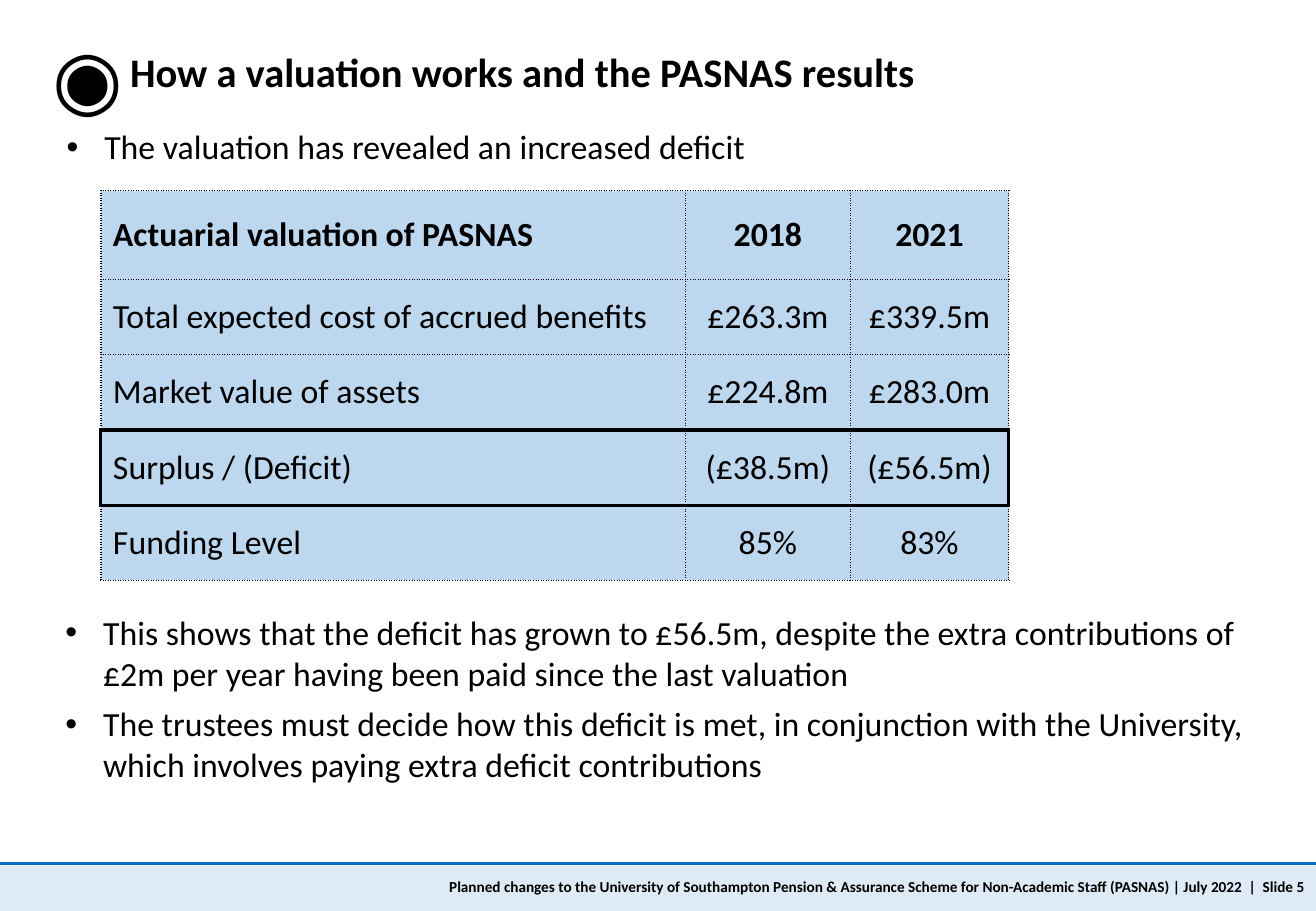
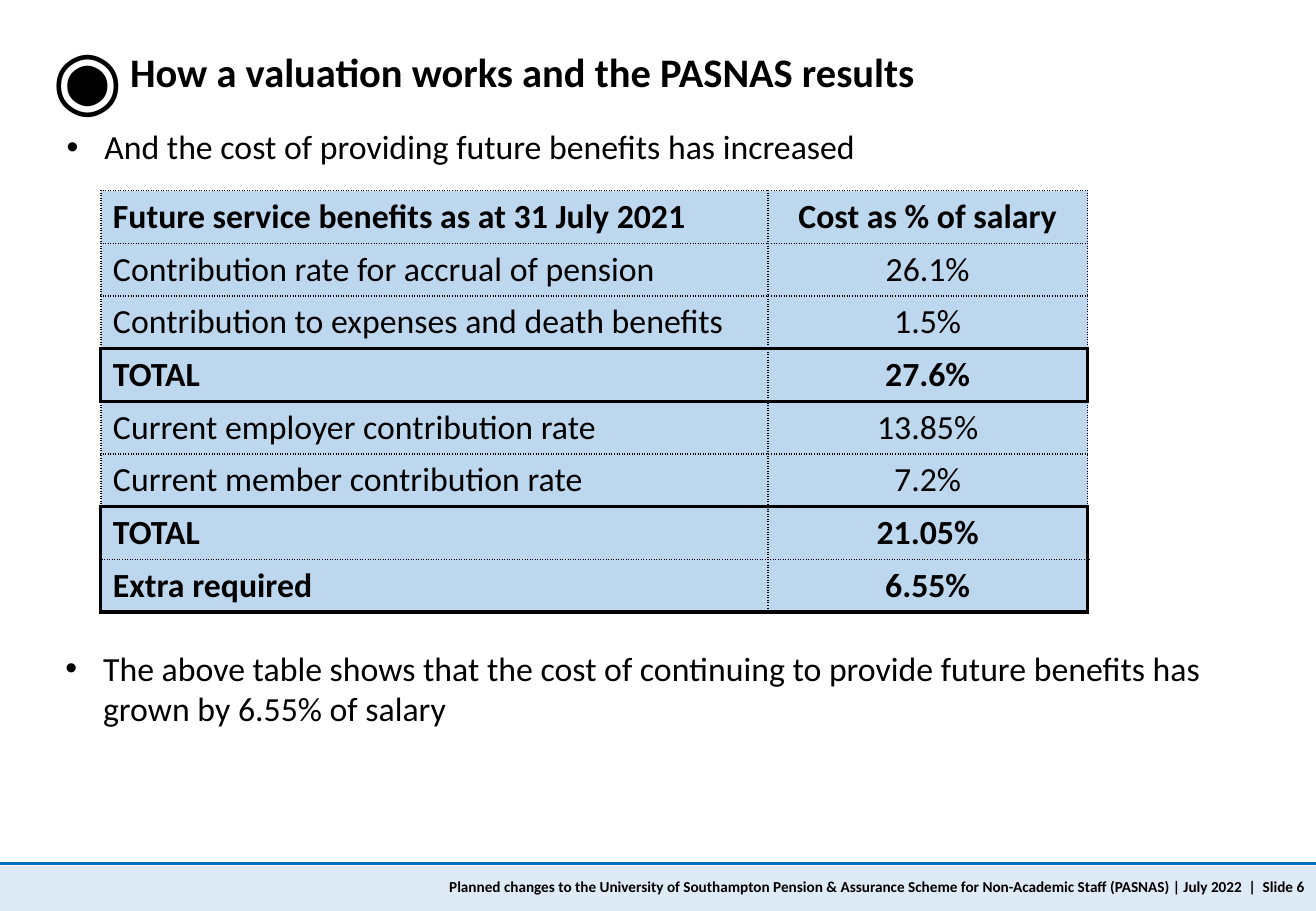
from dataclasses import dataclass

import pptx
import pptx.dml.color
import pptx.enum.shapes
import pptx.enum.text
import pptx.oxml
import pptx.oxml.ns
import pptx.util
from pptx.util import Inches

RGBColor = pptx.dml.color.RGBColor
Align = pptx.enum.text.PP_ALIGN
Anchor = pptx.enum.text.MSO_ANCHOR

BLACK = RGBColor(0x00, 0x00, 0x00)
RULE_BLUE = RGBColor(0x00, 0x70, 0xC0)
FOOTER_BLUE = RGBColor(0xDE, 0xEB, 0xF7)
CELL_BLUE = RGBColor(0xBD, 0xD7, 0xEE)

FONT = "Calibri"
SLIDE_WIDTH, SLIDE_HEIGHT = Inches(10.83), Inches(7.5)
TITLE = "How a valuation works and the PASNAS results"
FOOTER = (
    "Planned changes to the University of Southampton Pension & Assurance Scheme "
    "for Non-Academic Staff (PASNAS) | July 2022  |  Slide "
)
HANGING = Inches(0.31)
TABLE_LEFT, TABLE_TOP = Inches(0.83), Inches(1.57)
HEAVY, DOTTED = (2.25, "solid"), (1, "sysDot")


@dataclass
class ValuationTable:
    rows: list[list[str]]
    widths: list[float]
    heights: list[float]
    bold_rows: set[int]
    frames: list[tuple[int, int]]  # first and last row inside each heavy outline


@dataclass
class ValuationSlide:
    number: int
    intro: str
    table: ValuationTable
    findings_top: float
    findings: list[str]


SLIDES = [
    ValuationSlide(
        number=5,
        intro="The valuation has revealed an increased deficit",
        table=ValuationTable(
            rows=[
                ["Actuarial valuation of PASNAS", "2018", "2021"],
                ["Total expected cost of accrued benefits", "£263.3m", "£339.5m"],
                ["Market value of assets", "£224.8m", "£283.0m"],
                ["Surplus / (Deficit)", "(£38.5m)", "(£56.5m)"],
                ["Funding Level", "85%", "83%"],
            ],
            widths=[4.81, 1.36, 1.3],
            heights=[0.73] + [0.62] * 4,
            bold_rows={0},
            frames=[(3, 3)],
        ),
        findings_top=4.99,
        findings=[
            "This shows that the deficit has grown to £56.5m, despite the extra "
            "contributions of £2m per year having been paid since the last valuation",
            "The trustees must decide how this deficit is met, in conjunction with the "
            "University, which involves paying extra deficit contributions",
        ],
    ),
    ValuationSlide(
        number=6,
        intro="And the cost of providing future benefits has increased",
        table=ValuationTable(
            rows=[
                ["Future service benefits as at 31 July 2021", "Cost as % of salary"],
                ["Contribution rate for accrual of pension", "26.1%"],
                ["Contribution to expenses and death benefits", "1.5%"],
                ["TOTAL", "27.6%"],
                ["Current employer contribution rate", "13.85%"],
                ["Current member contribution rate", "7.2%"],
                ["TOTAL", "21.05%"],
                ["Extra required", "6.55%"],
            ],
            widths=[5.49, 2.63],
            heights=[3.47 / 8] * 8,
            bold_rows={0, 3, 6, 7},
            frames=[(3, 3), (6, 7)],
        ),
        findings_top=5.28,
        findings=[
            "The above table shows that the cost of continuing to provide future "
            "benefits has grown by 6.55% of salary",
        ],
    ),
]


def add_span(para, text: str, size: float, bold: bool = False) -> None:
    span = para.add_run()
    span.text = text
    span.font.name = FONT
    span.font.size = pptx.util.Pt(size)
    span.font.bold = bold
    span.font.color.rgb = BLACK


def add_box(page, left: float, top: float, width: float, height: float, anchor=Anchor.TOP):
    box = page.shapes.add_textbox(Inches(left), Inches(top), Inches(width), Inches(height))
    box.text_frame.word_wrap = True
    box.text_frame.vertical_anchor = anchor
    return box.text_frame


def add_line_of_text(frame, text: str, size: float, align, bold: bool = False) -> None:
    para = frame.paragraphs[0]
    para.alignment = align
    add_span(para, text, size, bold)


def add_footer(page, number: int) -> None:
    band_top, rule_top = Inches(7.13), Inches(7.11)
    band = page.shapes.add_shape(
        pptx.enum.shapes.MSO_SHAPE.RECTANGLE, 0, band_top, SLIDE_WIDTH, SLIDE_HEIGHT - band_top
    )
    band.shadow.inherit = False
    band.fill.solid()
    band.fill.fore_color.rgb = FOOTER_BLUE
    band.line.fill.background()

    frame = add_box(page, 1.2, 7.19, 9.63, 0.22, Anchor.MIDDLE)
    add_line_of_text(frame, f"{FOOTER}{number}", 9, Align.RIGHT, bold=True)

    rule = page.shapes.add_connector(
        pptx.enum.shapes.MSO_CONNECTOR.STRAIGHT, 0, rule_top, SLIDE_WIDTH, rule_top
    )
    rule.line.color.rgb = RULE_BLUE
    rule.line.width = pptx.util.Pt(2.25)
    rule._element.spPr.append(pptx.oxml.parse_xml(f"<a:effectLst {pptx.oxml.ns.nsdecls('a')}/>"))


def add_heading(page) -> None:
    title = page.shapes.title
    title.left, title.top = Inches(0.97), Inches(0.34)
    title.width, title.height = Inches(7.86), Inches(0.5)
    frame = title.text_frame
    frame.auto_size = pptx.enum.text.MSO_AUTO_SIZE.NONE
    frame.vertical_anchor = Anchor.TOP
    add_line_of_text(frame, TITLE, 24, Align.LEFT, bold=True)

    marker = add_box(page, 0.33, 0.39, 0.5, 0.45, Anchor.MIDDLE)
    add_line_of_text(marker, "◉", 48, Align.CENTER)


def add_bullets(page, left: float, top: float, height: float, items: list[str]) -> None:
    frame = add_box(page, left, top, 9.98, height)
    for index, item in enumerate(items):
        para = frame.paragraphs[0] if index == 0 else frame.add_paragraph()
        properties = para._p.get_or_add_pPr()
        properties.set("marL", str(HANGING))
        properties.set("indent", str(-HANGING))
        for tag in ('buFont typeface="Arial"', 'buChar char="•"'):
            name, attribute = tag.split(" ")
            properties.append(
                pptx.oxml.parse_xml(f"<a:{name} {pptx.oxml.ns.nsdecls('a')} {attribute}/>")
            )
        if index:
            para.space_before = pptx.util.Pt(6)
        add_span(para, item, 20)


def set_border(cell, side: str, style: tuple[float, str]) -> None:
    width, dash = style
    cell._tc.get_or_add_tcPr().append(pptx.oxml.parse_xml(
        f'<a:ln{side} {pptx.oxml.ns.nsdecls("a")} w="{pptx.util.Pt(width)}">'
        f'<a:solidFill><a:srgbClr val="{BLACK}"/></a:solidFill>'
        f'<a:prstDash val="{dash}"/></a:ln{side}>'
    ))


def add_valuation_table(page, content: ValuationTable) -> None:
    row_count, column_count = len(content.rows), len(content.widths)
    table = page.shapes.add_table(
        row_count, column_count, TABLE_LEFT, TABLE_TOP,
        Inches(sum(content.widths)), Inches(sum(content.heights)),
    ).table
    table.first_row = table.horz_banding = False
    for column, width in zip(table.columns, content.widths):
        column.width = Inches(width)
    for row, height in zip(table.rows, content.heights):
        row.height = Inches(height)

    # Horizontal edges are numbered from the top of the table
    heavy_edges = {edge for first, last in content.frames for edge in (first, last + 1)}
    framed_rows = {row for first, last in content.frames for row in range(first, last + 1)}
    for r, texts in enumerate(content.rows):
        for c, text in enumerate(texts):
            cell = table.cell(r, c)
            heavy = {
                "L": r in framed_rows and c == 0,
                "R": r in framed_rows and c == column_count - 1,
                "T": r in heavy_edges,
                "B": r + 1 in heavy_edges,
            }
            for side, is_heavy in heavy.items():
                set_border(cell, side, HEAVY if is_heavy else DOTTED)
            cell.fill.solid()
            cell.fill.fore_color.rgb = CELL_BLUE
            cell.vertical_anchor = Anchor.MIDDLE
            cell.margin_top = cell.margin_bottom = Inches(0.04)
            align = Align.CENTER if c else Align.LEFT
            add_line_of_text(cell.text_frame, text, 20, align, r in content.bold_rows)


def main() -> None:
    deck = pptx.Presentation()
    deck.slide_width, deck.slide_height = SLIDE_WIDTH, SLIDE_HEIGHT
    title_only = deck.slide_layouts[5]
    for content in SLIDES:
        page = deck.slides.add_slide(title_only)
        add_footer(page, content.number)
        add_heading(page)
        add_bullets(page, 0.45, 0.99, 0.44, [content.intro])
        add_valuation_table(page, content.table)
        add_bullets(page, 0.44, content.findings_top, 0.77 * len(content.findings), content.findings)
    deck.save("out.pptx")


if __name__ == "__main__":
    main()
